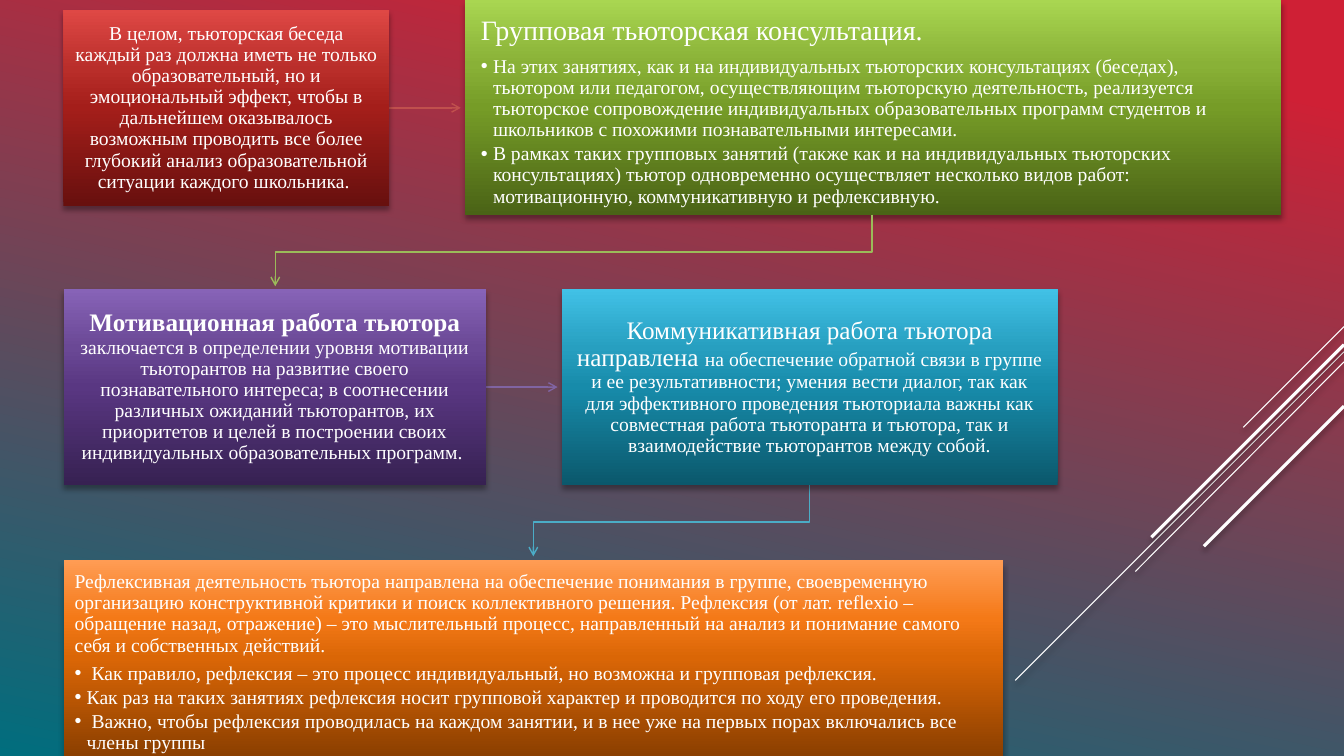
from dataclasses import dataclass

from lxml import etree
from pptx import Presentation
from pptx.dml.color import RGBColor
from pptx.enum.shapes import MSO_CONNECTOR, MSO_SHAPE
from pptx.enum.text import MSO_ANCHOR, MSO_AUTO_SIZE, PP_ALIGN
from pptx.oxml.ns import qn
from pptx.util import Inches, Pt

STRAIGHT = MSO_CONNECTOR.STRAIGHT
RECTANGLE = MSO_SHAPE.RECTANGLE
CENTER, LEFT = PP_ALIGN.CENTER, PP_ALIGN.LEFT
MIDDLE, TOP = MSO_ANCHOR.MIDDLE, MSO_ANCHOR.TOP
NO_AUTOFIT = MSO_AUTO_SIZE.NONE


@dataclass(frozen=True)
class Theme:
    font: str = "Times New Roman"
    white: str = "FFFFFF"
    shadow: str = "000000"
    heading: int = 20
    lead: int = 18
    body: int = 14
    background: tuple = ((10, "CF2035"), (100, "006E7E"))
    red: tuple = ((0, "68100E"), (50, "A41E1A"), (70, "B92E2A"), (100, "DF4845"))
    green: tuple = ((0, "4A6316"), (50, "769C27"), (70, "89B137"), (100, "A9D651"))
    purple: tuple = ((0, "372152"), (50, "593782"), (70, "6A4895"), (100, "8763B7"))
    blue: tuple = ((0, "0B586C"), (50, "178BAA"), (70, "279FC0"), (100, "41C1E6"))
    orange: tuple = ((0, "8B3F00"), (50, "DA6606"), (70, "F47917"), (100, "FF9C54"))
    red_line: str = "C0504D"
    green_line: str = "9BBB59"
    purple_line: str = "8064A2"
    blue_line: str = "4BACC6"


THEME = Theme()


def paint_gradient(owner, fill, stops, angle):
    """Fill with any number of (percent, colour) stops; angle is counter-clockwise."""
    fill.gradient()
    fill.gradient_angle = angle
    stop_list = next(owner.element.iter(qn("a:gsLst")))
    for stop in list(stop_list):
        stop_list.remove(stop)
    for percent, colour in stops:
        stop = etree.SubElement(stop_list, qn("a:gs"), pos=str(percent * 1000))
        etree.SubElement(stop, qn("a:srgbClr"), val=colour)


def set_effects(shape, shadow):
    """Replace the inherited effects by a soft drop shadow or by nothing."""
    effects = etree.SubElement(shape.element.spPr, qn("a:effectLst"))
    if shadow:
        outer = etree.SubElement(
            effects, qn("a:outerShdw"), blurRad=str(Pt(4)), dist=str(Pt(3)),
            dir="5400000", algn="ctr", rotWithShape="0")
        colour = etree.SubElement(outer, qn("a:srgbClr"), val=THEME.shadow)
        etree.SubElement(colour, qn("a:alpha"), val="35000")


deck = Presentation()
deck.slide_width, deck.slide_height = Inches(13.33), Inches(7.5)
page = deck.slides.add_slide(deck.slide_layouts[3])
paint_gradient(page, page.background.fill, THEME.background, 258)

title, group_list, reflection_list = page.placeholders
title.element.getparent().remove(title.element)

# Diagonal lines at the right edge: top, left, bottom, width
for top, left, bottom, width in (
    (3.24, 12.33, 4.24, 0.75),
    (3.49, 10.07, 6.75, 0.75),
    (3.59, 11.26, 5.67, 0.75),
    (3.42, 11.42, 5.33, 2.25),
    (4.03, 11.94, 5.42, 2.25),
):
    diagonal = page.shapes.add_connector(
        STRAIGHT, Inches(13.33), Inches(top), Inches(left), Inches(bottom))
    diagonal.line.color.rgb = RGBColor.from_string(THEME.white)
    diagonal.line.width = Pt(width)
    set_effects(diagonal, shadow=True)

# Arrows between the boxes
for colour, points in (
    (THEME.red_line, ((3.86, 1.07), (4.57, 1.07))),
    (THEME.green_line, ((8.65, 2.13), (8.65, 2.5), (2.73, 2.5), (2.73, 2.84))),
    (THEME.purple_line, ((4.82, 3.84), (5.53, 3.84))),
    (THEME.blue_line, ((8.03, 4.81), (8.03, 5.18), (5.29, 5.18), (5.29, 5.52))),
):
    corners = [(Inches(x), Inches(y)) for x, y in points]
    if len(corners) == 2:
        arrow = page.shapes.add_connector(STRAIGHT, *corners[0], *corners[1])
    else:
        builder = page.shapes.build_freeform(*corners[0])
        builder.add_line_segments(corners[1:], close=False)
        arrow = builder.convert_to_shape()
        arrow.fill.background()
    arrow.line.color.rgb = RGBColor.from_string(colour)
    arrow.line.width = Pt(1)
    etree.SubElement(arrow.element.spPr.find(qn("a:ln")), qn("a:tailEnd"), type="arrow")
    set_effects(arrow, shadow=False)

# Boxes: placeholder, bounds, gradient, inset, then paragraphs of (text, size, bold) runs
BOXES = (
    (None, (0.63, 0.1, 3.23, 1.94), THEME.red, 0.11, [
        [("В целом, тьюторская беседа каждый раз должна иметь не только образовательный, "
          "но и эмоциональный эффект, чтобы в дальнейшем оказывалось возможным проводить "
          "все более глубокий анализ образовательной ситуации каждого школьника. ",
          THEME.body, False)],
    ]),
    (group_list, (4.61, 0, 8.1, 2.13), THEME.green, 0.16, [
        [("Групповая тьюторская консультация.", THEME.heading, False)],
        [("На этих занятиях, как и на индивидуальных тьюторских консультациях (беседах), "
          "тьютором или педагогом, осуществляющим тьюторскую деятельность, реализуется "
          "тьюторское сопровождение индивидуальных образовательных программ студентов и "
          "школьников с похожими познавательными интересами.", THEME.body, False)],
        [("В рамках таких групповых занятий (также как и на индивидуальных тьюторских "
          "консультациях) тьютор одновременно осуществляет несколько видов работ: "
          "мотивационную, коммуникативную и рефлексивную.", THEME.body, False)],
    ]),
    (None, (0.63, 2.87, 4.19, 1.94), THEME.purple, 0.14, [
        [("Мотивационная работа тьютора ", THEME.lead, True),
         ("заключается в определении уровня мотивации тьюторантов на развитие своего "
          "познавательного интереса; в соотнесении различных ожиданий тьюторантов, их "
          "приоритетов и целей в построении своих индивидуальных образовательных "
          "программ. ", THEME.body, False)],
    ]),
    (None, (5.57, 2.87, 4.92, 1.94), THEME.blue, 0.14, [
        [("Коммуникативная работа тьютора направлена ", THEME.lead, False),
         ("на обеспечение обратной связи в группе и ее результативности; умения вести "
          "диалог, так как для эффективного проведения тьюториала важны как совместная "
          "работа тьюторанта и тьютора, так и взаимодействие тьюторантов между собой.",
          THEME.body, False)],
    ]),
    (reflection_list, (0.63, 5.56, 9.32, 1.94), THEME.orange, 0.11, [
        [("Рефлексивная деятельность тьютора направлена на обеспечение понимания в группе, "
          "своевременную организацию конструктивной критики и поиск коллективного решения. "
          "Рефлексия (от лат. reflexio – обращение назад, отражение) – это мыслительный "
          "процесс, направленный на анализ и понимание самого себя и собственных действий.",
          THEME.body, False)],
        [(" Как правило, рефлексия – это процесс индивидуальный, но возможна и групповая "
          "рефлексия.", THEME.body, False)],
        [("Как раз на таких занятиях рефлексия носит групповой характер и проводится по "
          "ходу его проведения.", THEME.body, False)],
        [(" Важно, чтобы рефлексия проводилась на каждом занятии, и в нее уже на первых "
          "порах включались все члены группы", THEME.body, False)],
    ]),
)

for placeholder, bounds, stops, inset, paragraphs in BOXES:
    left, top, width, height = map(Inches, bounds)
    box = placeholder
    if box is None:
        box = page.shapes.add_shape(RECTANGLE, left, top, width, height)
    box.left, box.top, box.width, box.height = left, top, width, height
    paint_gradient(box, box.fill, stops, 90)
    box.line.fill.background()
    set_effects(box, shadow=True)

    frame = box.text_frame
    frame.word_wrap = True
    frame.auto_size = NO_AUTOFIT
    frame.vertical_anchor = TOP if placeholder else MIDDLE
    frame.margin_left = frame.margin_right = Inches(inset)
    frame.margin_top = frame.margin_bottom = Inches(inset)

    for index, spans in enumerate(paragraphs):
        para = frame.add_paragraph() if index else frame.paragraphs[0]
        bulleted = index > 0
        para.level = int(bulleted)
        para.alignment = LEFT if placeholder else CENTER
        para.line_spacing = 0.9
        para.space_before = Pt(0)
        para.space_after = Pt(spans[0][1] * (0.15 if bulleted else 0.35))
        properties = para._p.get_or_add_pPr()
        indent = Inches(0.12) if bulleted else 0
        properties.set("marL", str(indent))
        properties.set("indent", str(-indent))
        if bulleted:
            etree.SubElement(properties, qn("a:buChar"), char="•")
        else:
            etree.SubElement(properties, qn("a:buNone"))
        for text, size, bold in spans:
            span = para.add_run()
            span.text = text
            span.font.name = THEME.font
            span.font.size = Pt(size)
            span.font.bold = bold
            span.font.color.rgb = RGBColor.from_string(THEME.white)

deck.save("out.pptx")
